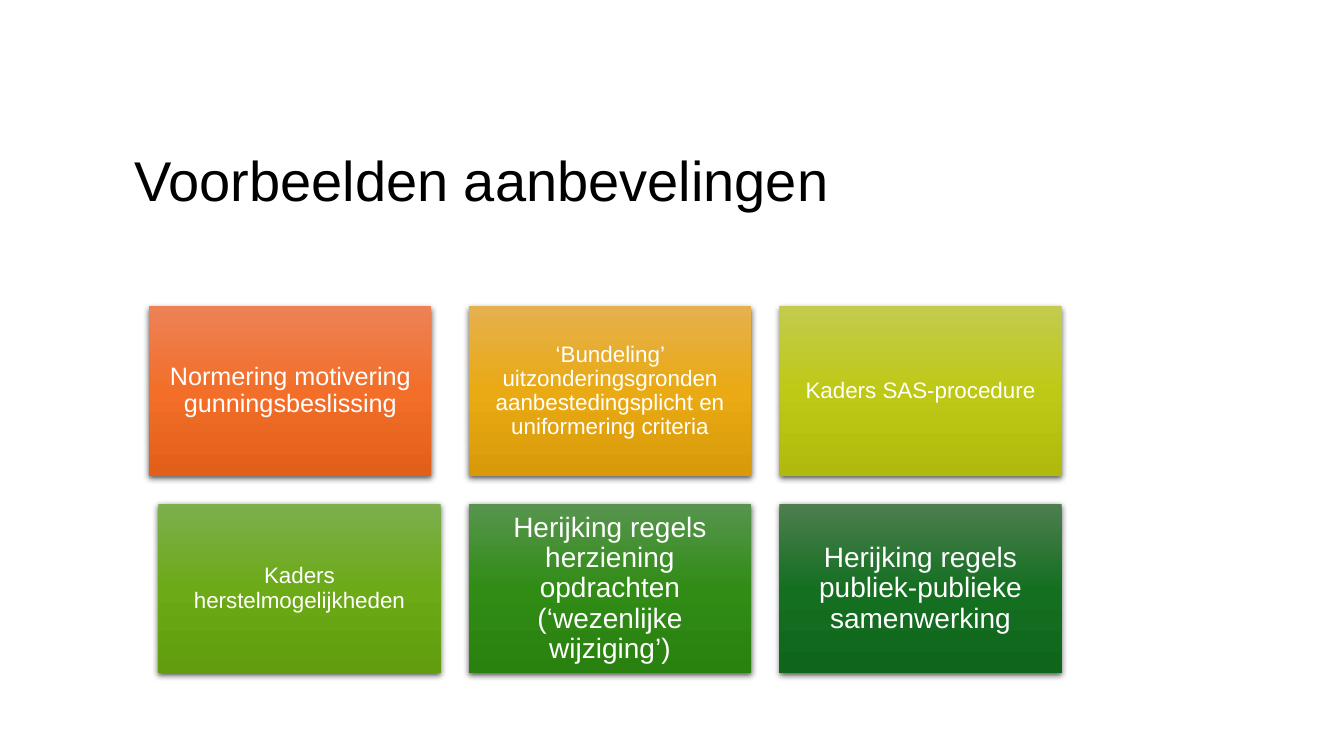
from copy import deepcopy

from lxml.etree import SubElement
from pptx import Presentation
from pptx.dml.color import RGBColor
from pptx.enum.shapes import MSO_SHAPE as Shape
from pptx.enum.text import MSO_ANCHOR as Anchor, PP_ALIGN as Align
from pptx.oxml.ns import qn
from pptx.util import Emu, Pt

EMU_PER_PX = 9144  # 100 px to the inch


def px(length):
    return Emu(length * EMU_PER_PX)


def color(value):
    return RGBColor.from_string(value)


class SlideBuilder:
    font = "Arial"
    line_spacing = 0.9

    def __init__(self, deck):
        self.slide = deck.slides.add_slide(deck.slide_layouts[6])

    def set_text(self, shape, text, size, ink, align, insets):
        frame = shape.text_frame
        frame.word_wrap = True
        frame.vertical_anchor = Anchor.MIDDLE
        (frame.margin_left, frame.margin_top,
         frame.margin_right, frame.margin_bottom) = map(px, insets)
        frame.text = text
        para = frame.paragraphs[0]
        para.alignment = align
        para.line_spacing = self.line_spacing
        font = para.runs[0].font
        font.name, font.size = self.font, Pt(size)
        font.color.rgb = color(ink)

    def title(self, text, left, top, width, height):
        box = self.slide.shapes.add_textbox(*map(px, (left, top, width, height)))
        self.set_text(box, text, 40, "000000", Align.LEFT, (41, 5, 10, 5))

    def tile(self, text, left, top, width, height, size, inset, shades):
        tile = self.slide.shapes.add_shape(
            Shape.RECTANGLE, *map(px, (left, top, width, height)))
        tile.line.fill.background()
        self.gradient(tile, shades)
        self.soft_shadow(tile)
        self.set_text(tile, text, size, "FFFFFF", Align.CENTER, [inset] * 4)

    def gradient(self, shape, shades):
        """Fill from top to bottom with evenly spaced shades."""
        fill = shape.fill
        fill.gradient()
        fill.gradient_angle = 270
        stop_list = next(shape._element.spPr.iter(qn("a:gsLst")))
        while len(stop_list) < len(shades):
            stop_list.append(deepcopy(stop_list[0]))
        for index, (stop, shade) in enumerate(zip(fill.gradient_stops, shades)):
            stop.position = index / (len(shades) - 1)
            stop.color.rgb = color(shade)

    def soft_shadow(self, shape):
        shape.shadow.inherit = False
        effects = shape._element.spPr.find(qn("a:effectLst"))
        shadow = SubElement(effects, qn("a:outerShdw"), blurRad=str(Pt(4.5)),
                            dist=str(Pt(1.5)), dir="5400000", rotWithShape="0")
        black = SubElement(shadow, qn("a:srgbClr"), val="000000")
        SubElement(black, qn("a:alpha"), val="63000")


# Tile grid
TILE_WIDTH, TILE_HEIGHT = 280, 168
GRID_LEFT, GRID_TOP = 157, 304
COLUMN_STEP, ROW_STEP = 308, 196
COLUMNS = 3
FIRST_TILE_SHIFT = -9  # the first tile stands slightly left of its column

# Text, font size, inset, shades from top to bottom
RECOMMENDATIONS = [
    ("Normering motivering gunningsbeslissing", 18, 7,
     ("ED8257", "F26E29", "E25F1A")),
    ("‘Bundeling’ uitzonderingsgronden aanbestedingsplicht en uniformering criteria",
     16, 7, ("E6B04E", "E9AA13", "D89A09")),
    ("Kaders SAS-procedure", 16, 7, ("C2CB4E", "BEC916", "AFBA0C")),
    ("Kaders herstelmogelijkheden", 16, 7, ("7DAF4E", "6CAA17", "619D0E")),
    ("Herijking regels herziening opdrachten (‘wezenlijke wijziging’)", 20, 8,
     ("57954E", "318C16", "29810F")),
    ("Herijking regels publiek-publieke samenwerking", 20, 8,
     ("4D7E50", "156F21", "0F661B")),
]


def main():
    deck = Presentation()
    deck.slide_width, deck.slide_height = px(1333), px(750)
    page = SlideBuilder(deck)

    # Heading
    page.title("Voorbeelden aanbevelingen", 92, 60, 826, 244)

    # Recommendations
    for index, (text, size, inset, shades) in enumerate(RECOMMENDATIONS):
        row, column = divmod(index, COLUMNS)
        left = GRID_LEFT + column * COLUMN_STEP
        if index == 0:
            left += FIRST_TILE_SHIFT
        page.tile(text, left, GRID_TOP + row * ROW_STEP,
                  TILE_WIDTH, TILE_HEIGHT, size, inset, shades)

    deck.save("out.pptx")


if __name__ == "__main__":
    main()
